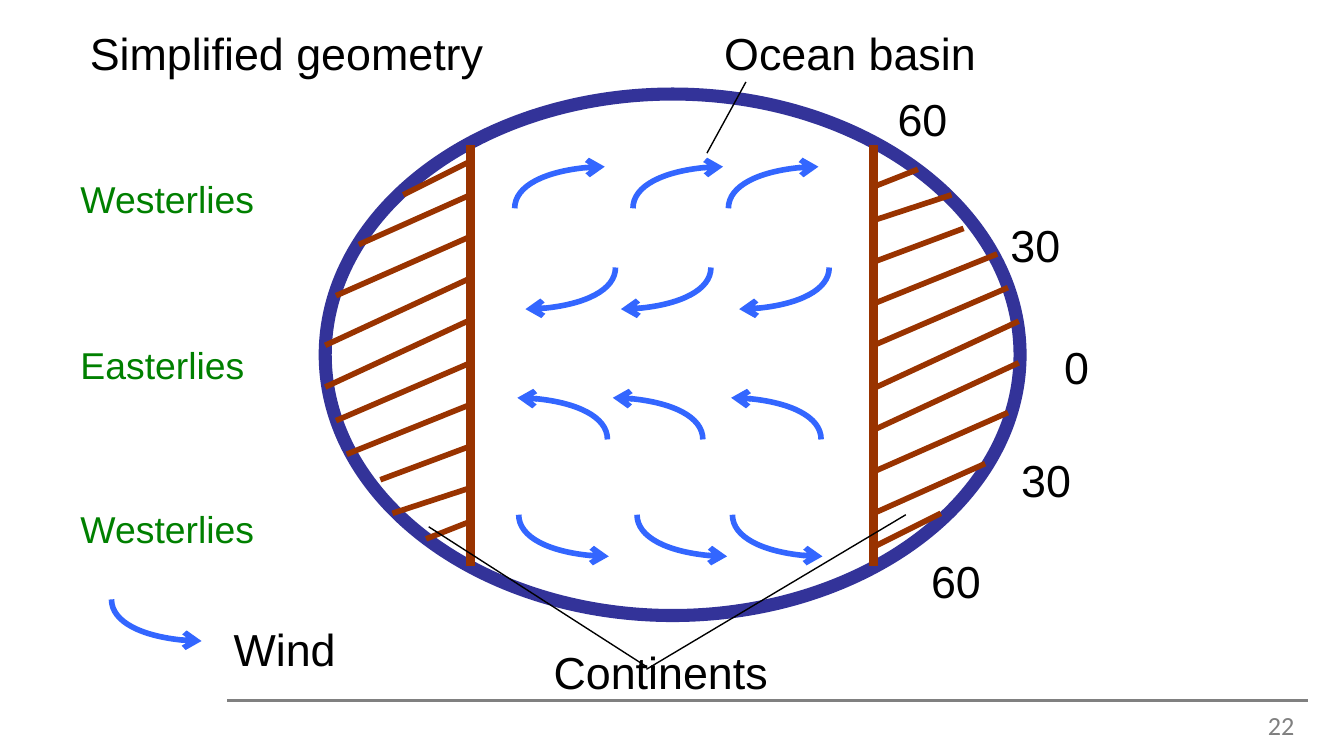
from lxml import etree
from pptx import Presentation
from pptx.dml.color import RGBColor
from pptx.enum.shapes import MSO_CONNECTOR, MSO_SHAPE
from pptx.enum.text import MSO_ANCHOR, PP_ALIGN
from pptx.oxml.ns import qn
from pptx.util import Inches, Pt

HUES = {"rim": "333399", "land": "993300", "wind": "3366FF", "belt": "008000",
        "ink": "000000", "gray": "808080", "sea": "FFFFFF"}


def rgb(hue):
    return RGBColor.from_string(HUES[hue])


def draw(home, start, end, hue, width, curve=False):
    """Draw a straight line, or a quarter-ellipse wind arrow, in home."""
    (x, y), (u, v) = start, end
    if curve:
        bend = 0.55
        pen = home.build_freeform(Inches(x), Inches(y))
        spots = [(x, y + bend * (v - y)), (u - bend * (u - x), v), (u, v)]
        pen.add_line_segments([(Inches(a), Inches(b)) for a, b in spots], close=False)
        shape = pen.convert_to_shape()
        shape.shadow.inherit = False
        shape.fill.background()
        # Turn the three straight steps into one cubic curve
        path = next(shape._element.iter(qn("a:path")))
        cubic = etree.SubElement(path, qn("a:cubicBezTo"))
        for step in path.findall(qn("a:lnTo")):
            cubic.append(step[0])
            path.remove(step)
    else:
        shape = home.add_connector(MSO_CONNECTOR.STRAIGHT,
                                   *map(Inches, (x, y, u, v)))
        etree.SubElement(shape._element.spPr, qn("a:effectLst"))
    shape.line.color.rgb = rgb(hue)
    shape.line.width = Pt(width)
    if curve:
        etree.SubElement(shape.line._get_or_add_ln(), qn("a:tailEnd"), type="arrow")


deck = Presentation()
deck.slide_width = Inches(10)
deck.slide_height = Inches(10 * 9 / 16)
shapes = deck.slides.add_slide(deck.slide_layouts[6]).shapes

# Footer rule and globe
draw(shapes, (1.69, 5.21), (9.73, 5.21), "gray", 1.5)
globe = shapes.add_shape(MSO_SHAPE.OVAL, *map(Inches, (2.42, 0.7, 5.17, 3.88)))
globe.shadow.inherit = False
globe.fill.solid()
globe.fill.fore_color.rgb = rgb("sea")
globe.line.color.rgb = rgb("rim")
globe.line.width = Pt(7)

# Continents: the east hatching is the west one turned by half
WEST, EAST = 3.5, 6.5
for coast in (WEST, EAST):
    draw(shapes, (coast, 1.08), (coast, 4.21), "land", 5)
hatch = [(1.2, 3, 1.45), (1.45, 2.67, 1.82), (1.76, 2.5, 2.2), (2.07, 2.42, 2.57),
         (2.38, 2.42, 2.88), (2.7, 2.5, 3.13), (3.01, 2.58, 3.38),
         (3.32, 2.83, 3.57), (3.63, 2.92, 3.82), (3.88, 3.17, 4.01)]
west, east = shapes.add_group_shape().shapes, shapes.add_group_shape().shapes
for y, u, v in hatch:
    draw(west, (WEST, y), (u, v), "land", 3)
    draw(east, (EAST, 5.27 - y), (10 - u, 5.27 - v), "land", 3)

# Winds: first tail, then run and rise of each arrow in the row
RUN, RISE = 0.67, 0.31
for x, y, run, rise in [(3.83, 1.55, RUN, -RISE), (4.58, 1.99, -RUN, RISE),
                        (4.52, 3.27, -RUN, -RISE), (3.86, 3.83, RUN, RISE)]:
    row = shapes.add_group_shape().shapes
    for gap in (0, 0.88 if run > 0 else 0.71, 1.59):
        draw(row, (x + gap, y), (x + gap + run, y + rise), "wind", 3, curve=True)
draw(shapes, (0.83, 4.46), (0.83 + RUN, 4.46 + RISE), "wind", 3, curve=True)

# Labels
labels = [
    ("0", 7.82, 2.48, 0.39, "ink"),
    ("30", 7.5, 3.32, 0.58, "ink"),
    ("30", 7.42, 1.57, 0.58, "ink"),
    ("60", 6.83, 4.07, 0.57, "ink"),
    ("60", 6.58, 0.63, 0.57, "ink"),
    ("Wind", 1.64, 4.58, 0.97, "ink"),
    ("Simplified geometry", 0.57, 0.14, 3.16, "ink"),
    ("Ocean basin", 5.29, 0.14, 2.09, "ink"),
    ("Continents", 4.02, 4.75, 1.81, "ink"),
    ("Easterlies", 0.5, 2.5, 1.43, "belt"),
    ("Westerlies", 0.5, 1.26, 1.51, "belt"),
    ("Westerlies", 0.5, 3.72, 1.51, "belt"),
    ("22", 7.76, 5.24, 1.97, "gray"),
]
styles = {"ink": ("Arial", 24, 0.5), "belt": ("Arial", 20, 0.44),
          "gray": ("Calibri", 14, 0.31)}
for text, x, y, width, hue in labels:
    face, size, height = styles[hue]
    frame = shapes.add_textbox(*map(Inches, (x, y, width, height))).text_frame
    frame.word_wrap = hue == "gray"
    para = frame.paragraphs[0]
    para.text = text
    para.font.name, para.font.size = face, Pt(size)
    para.font.color.rgb = rgb(hue)
    if hue == "gray":
        frame.vertical_anchor = MSO_ANCHOR.MIDDLE
        para.alignment = PP_ALIGN.RIGHT

# Leader lines
for start, end in [((5.55, 0.61), (5.26, 1.14)), ((4.81, 4.96), (3.19, 3.92)),
                   ((4.81, 4.98), (6.74, 3.83))]:
    draw(shapes, start, end, "ink", 0.75)

deck.save("out.pptx")
